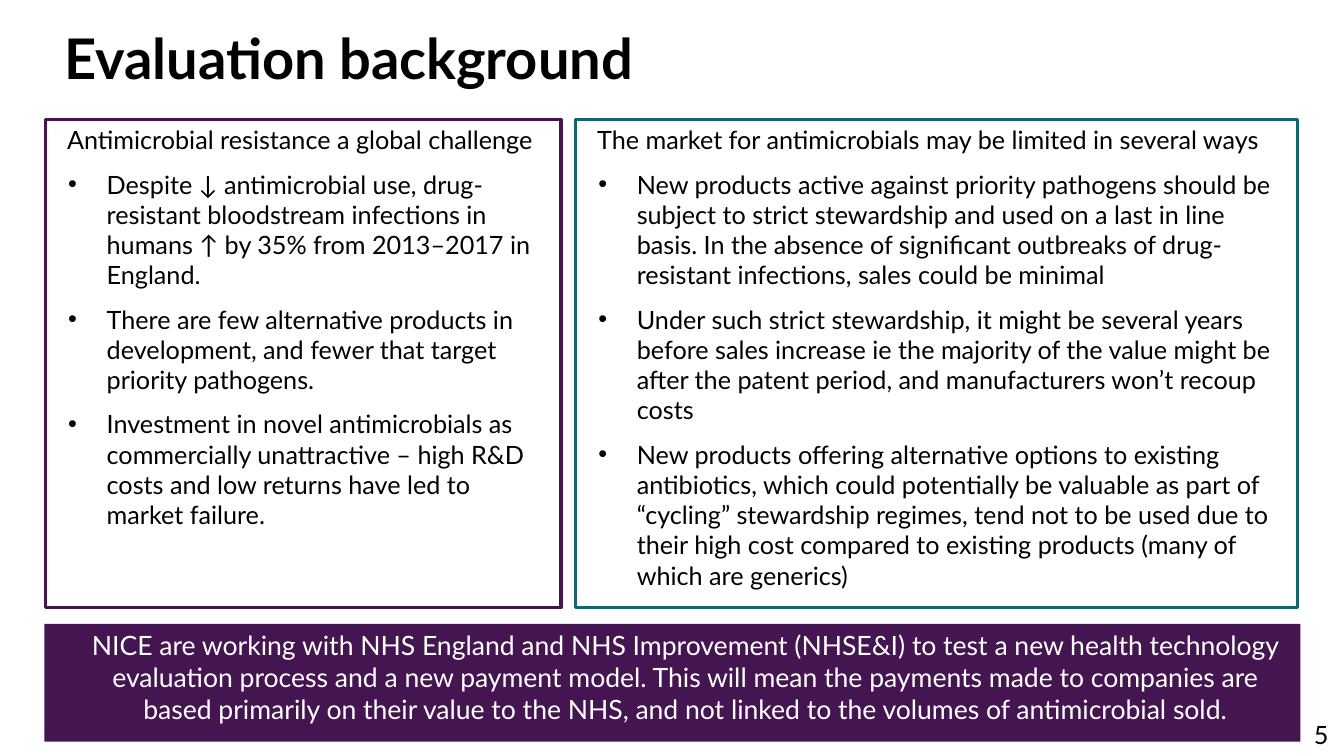
from dataclasses import dataclass

from lxml.etree import SubElement
from pptx import Presentation
from pptx.dml.color import RGBColor
from pptx.enum.shapes import MSO_SHAPE as Shape
from pptx.enum.text import MSO_ANCHOR as Anchor, MSO_AUTO_SIZE as AutoSize, PP_ALIGN as Align
from pptx.oxml.ns import qn
from pptx.util import Cm, Pt


@dataclass(frozen=True)
class Theme:
    font: str = "Lato"
    black: RGBColor = RGBColor(0x00, 0x00, 0x00)
    white: RGBColor = RGBColor(0xFF, 0xFF, 0xFF)
    purple: RGBColor = RGBColor(0x45, 0x15, 0x51)
    teal: RGBColor = RGBColor(0x18, 0x64, 0x6E)
    title_size: Pt = Pt(40)
    body_size: Pt = Pt(18)
    banner_size: Pt = Pt(19)
    paragraph_gap: Pt = Pt(10)
    border: Pt = Pt(2.25)


THEME = Theme()

# Shared geometry
PANEL_TOP, PANEL_HEIGHT = Cm(3.02), Cm(12.29)
HEADING_INDENT = Cm(0.3)
BULLET_INDENT, BULLET_HANG = Cm(1.3), Cm(0.97)
BANNER_INDENT = Cm(0.66)

# Content
CHALLENGE_HEADING = "Antimicrobial resistance a global challenge"
CHALLENGE_POINTS = [
    "Despite ↓ antimicrobial use, drug-resistant bloodstream infections in humans ↑ by 35% "
    "from 2013–2017 in England.",
    "There are few alternative products in development, and fewer that target priority pathogens.",
    "Investment in novel antimicrobials as commercially unattractive – high R&D costs and low "
    "returns have led to market failure.",
]
MARKET_HEADING = "The market for antimicrobials may be limited in several ways"
MARKET_POINTS = [
    "New products active against priority pathogens should be subject to strict stewardship and "
    "used on a last in line basis. In the absence of significant outbreaks of drug-resistant "
    "infections, sales could be minimal",
    "Under such strict stewardship, it might be several years before sales increase ie the "
    "majority of the value might be after the patent period, and manufacturers won’t recoup costs",
    "New products offering alternative options to existing antibiotics, which could potentially "
    "be valuable as part of “cycling” stewardship regimes, tend not to be used due to their high "
    "cost compared to existing products (many of which are generics)",
]
BANNER_TEXT = (
    "NICE are working with NHS England and NHS Improvement (NHSE&I) to test a new health "
    "technology evaluation process and a new payment model. This will mean the payments made to "
    "companies are based primarily on their value to the NHS, and not linked to the volumes of "
    "antimicrobial sold."
)


def add_run(paragraph, text, size=THEME.body_size, color=THEME.black, bold=False):
    run = paragraph.add_run()
    run.text = text
    run.font.name = THEME.font
    run.font.size = size
    run.font.bold = bold
    run.font.color.rgb = color


def indent(paragraph, left, hanging=0):
    properties = paragraph._p.get_or_add_pPr()
    properties.set("marL", str(left))
    properties.set("indent", str(-hanging))


def add_bullet(paragraph):
    indent(paragraph, BULLET_INDENT, BULLET_HANG)
    properties = paragraph._p.get_or_add_pPr()
    SubElement(properties, qn("a:buFont")).set("typeface", "Arial")
    SubElement(properties, qn("a:buChar")).set("char", "•")


def add_title(slide, text):
    title = slide.shapes.title
    title.left, title.top, title.width, title.height = Cm(1.37), Cm(0.66), Cm(31.04), Cm(1.96)
    frame = title.text_frame
    frame.auto_size = AutoSize.NONE
    frame.vertical_anchor = Anchor.TOP
    paragraph = frame.paragraphs[0]
    paragraph.alignment = Align.LEFT
    paragraph.line_spacing = 0.9
    add_run(paragraph, text, THEME.title_size, bold=True)


def add_box(slide, left, top, width, height):
    """Add a rectangle whose text wraps and starts at the top."""
    box = slide.shapes.add_shape(Shape.RECTANGLE, left, top, width, height)
    box.shadow.inherit = False
    box.text_frame.word_wrap = True
    box.text_frame.vertical_anchor = Anchor.TOP
    return box


def add_panel(slide, left, width, border_color, heading, points):
    panel = add_box(slide, left, PANEL_TOP, width, PANEL_HEIGHT)
    panel.fill.background()
    panel.line.color.rgb = border_color
    panel.line.width = THEME.border

    frame = panel.text_frame
    indent(frame.paragraphs[0], HEADING_INDENT)
    add_run(frame.paragraphs[0], heading)
    for point in points:
        paragraph = frame.add_paragraph()
        add_run(paragraph, point)
    for paragraph in frame.paragraphs:
        paragraph.alignment = Align.LEFT
        paragraph.space_before = THEME.paragraph_gap
    for paragraph in frame.paragraphs[1:]:
        add_bullet(paragraph)


def add_banner(slide, text):
    banner = add_box(slide, Cm(1.12), Cm(15.72), Cm(31.65), Cm(2.97))
    banner.fill.solid()
    banner.fill.fore_color.rgb = THEME.purple
    banner.line.fill.background()
    paragraph = banner.text_frame.paragraphs[0]
    paragraph.alignment = Align.CENTER
    paragraph.space_before = THEME.paragraph_gap
    indent(paragraph, BANNER_INDENT)
    add_run(paragraph, text, THEME.banner_size, THEME.white)


def add_page_number(slide, number):
    text_box = slide.shapes.add_textbox(Cm(29.06), Cm(18.01), Cm(4.67), Cm(1.02))
    text_box.text_frame.word_wrap = True
    paragraph = text_box.text_frame.paragraphs[0]
    paragraph.alignment = Align.RIGHT
    add_run(paragraph, number)


def main():
    presentation = Presentation()
    presentation.slide_width, presentation.slide_height = Cm(33.87), Cm(19.05)
    slide = presentation.slides.add_slide(presentation.slide_layouts[5])

    add_page_number(slide, "5")
    add_title(slide, "Evaluation background")

    # Two bordered panels above the closing banner
    add_panel(slide, Cm(1.14), Cm(13), THEME.purple, CHALLENGE_HEADING, CHALLENGE_POINTS)
    add_panel(slide, Cm(14.5), Cm(18.21), THEME.teal, MARKET_HEADING, MARKET_POINTS)
    add_banner(slide, BANNER_TEXT)

    presentation.save("out.pptx")


if __name__ == "__main__":
    main()
